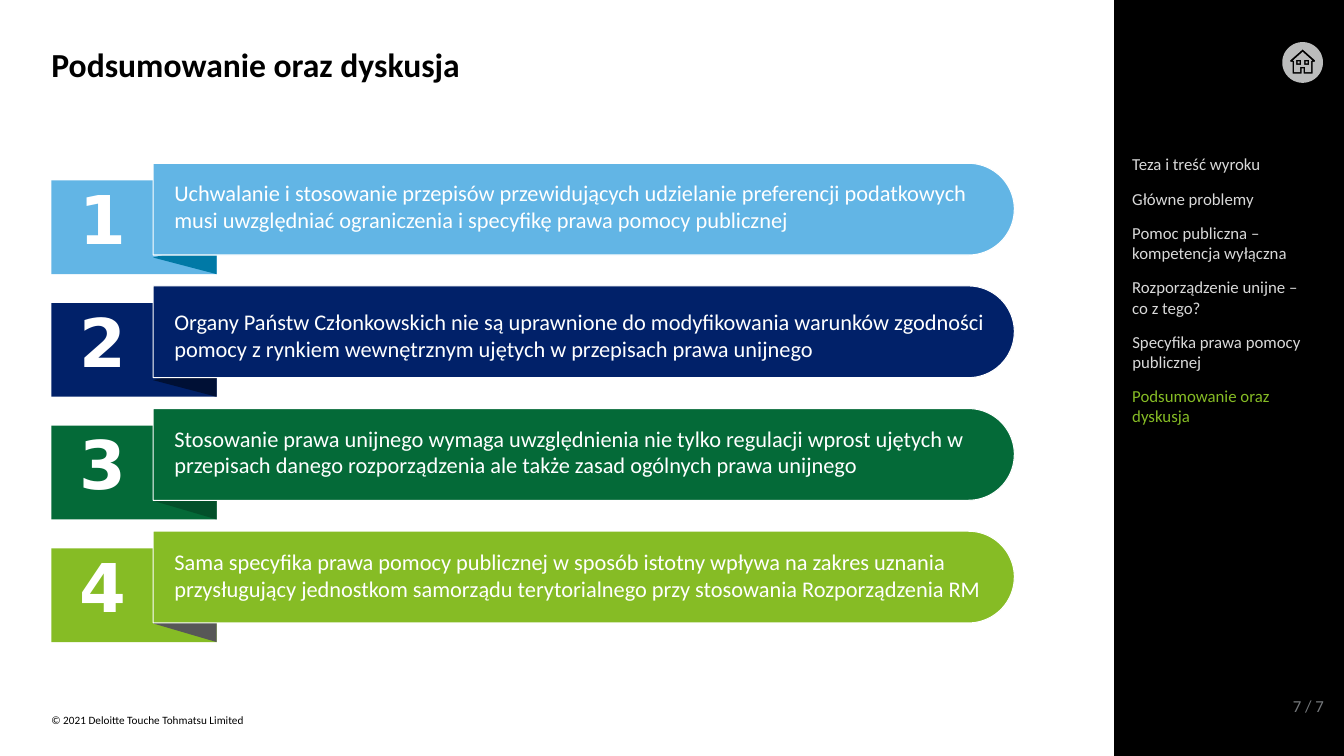
import math

import pptx
import pptx.dml.color
import pptx.enum.shapes
import pptx.enum.text
import pptx.util

# Content
TITLE = "Podsumowanie oraz dyskusja"
COPYRIGHT = "© 2021 Deloitte Touche Tohmatsu Limited"
PAGE = "7 / 7"
# text, banner colour, fold colour, fold height, text offset from the tab's top
CONCLUSIONS = [
    ("Uchwalanie i stosowanie przepisów przewidujących udzielanie preferencji podatkowych "
     "musi uwzględniać ograniczenia i specyfikę prawa pomocy publicznej",
     "sky", "teal", 0.33, -0.01),
    ("Organy Państw Członkowskich nie są uprawnione do modyfikowania warunków zgodności "
     "pomocy z rynkiem wewnętrznym ujętych w przepisach prawa unijnego",
     "navy", "midnight", 0.33, 0.05),
    ("Stosowanie prawa unijnego wymaga uwzględnienia nie tylko regulacji wprost ujętych w "
     "przepisach danego rozporządzenia ale także zasad ogólnych prawa unijnego",
     "green", "forest", 0.37, -0.01),
    ("Sama specyfika prawa pomocy publicznej w sposób istotny wpływa na zakres uznania "
     "przysługujący jednostkom samorządu terytorialnego przy stosowania Rozporządzenia RM",
     "lime", "slate", 0.37, 0),
]
# entry, lines it takes, width
AGENDA = [
    ("Teza i treść wyroku", 1, 1.54),
    ("Główne problemy", 1, 1.54),
    ("Pomoc publiczna – kompetencja wyłączna", 2, 1.54),
    ("Rozporządzenie unijne – co z tego?", 2, 1.73),
    ("Specyfika prawa pomocy publicznej", 2, 1.81),
    ("Podsumowanie oraz dyskusja", 2, 1.73),
]
COLOURS = {
    "black": "000000", "white": "FFFFFF", "grey": "75787B", "silver": "BBBCBC",
    "pale": "D9D9D9", "sky": "62B5E5", "teal": "0079A6", "navy": "012169",
    "midnight": "001035", "green": "046A38", "forest": "03502A",
    "lime": "86BC25", "slate": "575757",
}

# Layout in inches
WIDTH, HEIGHT = 13.33, 7.5
MARGIN = 0.51
SIDEBAR_LEFT, AGENDA_LEFT, AGENDA_TOP = 11.05, 11.23, 1.53
LINE_HEIGHT, AGENDA_GAP = 0.2, 0.14
ROW_TOP, ROW_PITCH = 1.79, 3.65 / 3
TAB_WIDTH, TAB_HEIGHT = 1.64, 0.93
BANNER_LEFT, BANNER_LENGTH, BANNER_HEIGHT, BANNER_RISE = 1.52, 8.54, 0.91, 0.17
FOLD_LENGTH = MARGIN + TAB_WIDTH - BANNER_LEFT

# Home button outlines, relative to the disc's centre in hundredths of an inch
DISC_CENTRE, DISC_RADIUS = (12.92, 0.62), 20.2
HOUSE_OUTER = [(0, -13), (12.5, -2), (12, -0.5), (10, -0.5), (10, 11), (1, 11), (1, 6),
               (-1, 6), (-1, 11), (-10, 11), (-10, -0.5), (-12, -0.5), (-12.5, -2)]
HOUSE_INNER = [(0, -10.5), (9.5, -2), (8.5, -1.5), (8.5, 9.5), (2.5, 9.5), (2.5, 4.5),
               (-2.5, 4.5), (-2.5, 9.5), (-8.5, 9.5), (-8.5, -1.5), (-9.5, -2)]

SHAPES = pptx.enum.shapes.MSO_SHAPE
ALIGN = pptx.enum.text.PP_ALIGN
inch = pptx.util.Inches

deck = pptx.Presentation()
deck.slide_width, deck.slide_height = inch(WIDTH), inch(HEIGHT)
slide = deck.slides.add_slide(deck.slide_layouts[6])


def rgb(name):
    return pptx.dml.color.RGBColor.from_string(COLOURS[name])


def paint(shape, colour, outline=None):
    shape.shadow.inherit = False
    shape.fill.solid()
    shape.fill.fore_color.rgb = rgb(colour)
    if outline:
        shape.line.color.rgb = rgb(outline)
        shape.line.width = pptx.util.Pt(0.75)
    else:
        shape.line.fill.background()


def add_block(kind, left, top, width, height, colour, rotation=0, outline=None):
    """Place a shape by the area it covers, also after a quarter turn."""
    w, h = (height, width) if rotation else (width, height)
    block = slide.shapes.add_shape(
        kind, inch(left + (width - w) / 2), inch(top + (height - h) / 2), inch(w), inch(h))
    block.rotation = rotation
    paint(block, colour, outline)
    return block


def add_text(text, left, top, width, height, size, colour,
             bold=False, align=ALIGN.LEFT, font="Calibri"):
    frame = slide.shapes.add_textbox(
        inch(left), inch(top), inch(width), inch(height)).text_frame
    frame.word_wrap = True
    frame.margin_left = frame.margin_top = frame.margin_right = frame.margin_bottom = 0
    frame.text = text
    frame.paragraphs[0].alignment = align
    style = frame.paragraphs[0].runs[0].font
    style.name, style.size, style.bold = font, pptx.util.Pt(size), bold
    style.color.rgb = rgb(colour)


def rectangle(x, y, w, h):
    return [(x, y), (x + w, y), (x + w, y + h), (x, y + h)]


# Title, sidebar and footer
add_text(TITLE, MARGIN, 0.44, 10.02, 0.37, 24, "black", bold=True)
add_text(COPYRIGHT, MARGIN, 7.08, 5.86, 0.13, 8, "black")
add_block(SHAPES.RECTANGLE, SIDEBAR_LEFT, 0, WIDTH - SIDEBAR_LEFT, HEIGHT, "black")
add_text(PAGE, 11.24, 6.9, 1.89, LINE_HEIGHT, 12, "grey", align=ALIGN.RIGHT)

# Home button: a disc with the house cut out of it
disc = [(DISC_RADIUS * math.cos(math.radians(a)), DISC_RADIUS * math.sin(math.radians(a)))
        for a in range(0, 360, 6)]
contours = [disc, HOUSE_OUTER, HOUSE_INNER]
for window_x in (-6.5, 1.5):
    contours += [rectangle(window_x, -2.5, 5, 5), rectangle(window_x + 1.5, -1, 2, 2)]
units = 1000
outlines = [[((DISC_CENTRE[0] + x / 100) * units, (DISC_CENTRE[1] + y / 100) * units)
             for x, y in contour] for contour in contours]
home = slide.shapes.build_freeform(*outlines[0][0], scale=inch(1) / units)
for number, outline in enumerate(outlines):
    if number:
        home.move_to(*outline[0])
    home.add_line_segments(outline[1:], close=True)
paint(home.convert_to_shape(), "silver")

# Agenda, with the current entry last
agenda_top = AGENDA_TOP
for entry, lines, width in AGENDA:
    colour = "lime" if entry == TITLE else "pale"
    add_text(entry, AGENDA_LEFT, agenda_top, width, lines * LINE_HEIGHT, 12, colour)
    agenda_top += lines * LINE_HEIGHT + AGENDA_GAP

# Numbered conclusions: tab, fold, banner, number, text
for row, (text, colour, fold_colour, fold_height, offset) in enumerate(CONCLUSIONS):
    top = ROW_TOP + row * ROW_PITCH
    add_block(SHAPES.RECTANGLE, MARGIN, top, TAB_WIDTH, TAB_HEIGHT, colour)
    add_block(SHAPES.ISOSCELES_TRIANGLE, BANNER_LEFT, top + TAB_HEIGHT - fold_height,
              FOLD_LENGTH, fold_height, fold_colour, rotation=270)
    banner = add_block(SHAPES.ROUND_2_SAME_RECTANGLE, BANNER_LEFT, top - BANNER_RISE,
                       BANNER_LENGTH, BANNER_HEIGHT, colour, rotation=90, outline="white")
    banner.adjustments[0], banner.adjustments[1] = 0.5, 0
    add_text(str(row + 1), 0.59, top - 0.03, 0.86, 0.81, 48, "white",
             bold=True, align=ALIGN.CENTER, font="DejaVu Sans")
    add_text(text, 1.73, top + offset, 8.2, 0.54, 16, "white")

deck.save("out.pptx")
